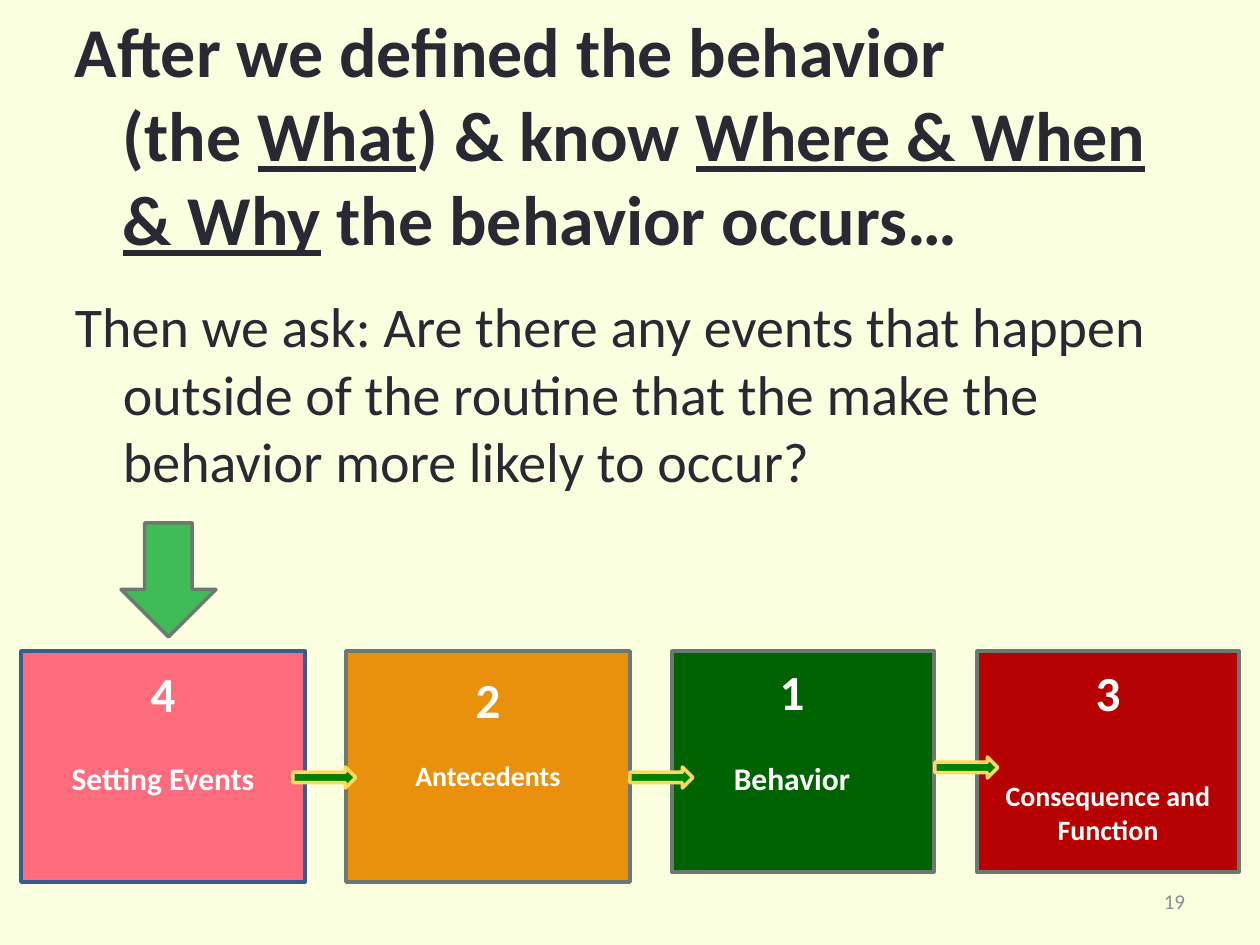
from dataclasses import dataclass

from pptx import Presentation
from pptx.dml.color import RGBColor
from pptx.enum.shapes import MSO_SHAPE
from pptx.enum.text import MSO_ANCHOR, PP_ALIGN
from pptx.util import Pt

RECT, RIGHT, DOWN = MSO_SHAPE.RECTANGLE, MSO_SHAPE.RIGHT_ARROW, MSO_SHAPE.DOWN_ARROW
CENTER, ALIGN_RIGHT = PP_ALIGN.CENTER, PP_ALIGN.RIGHT
TOP, MIDDLE = MSO_ANCHOR.TOP, MSO_ANCHOR.MIDDLE
FONT = "Calibri"
COLORS = {
    "background": "FAFFE0", "text": "292934", "white": "FFFFFF", "page": "8D8D8F",
    "orange": "E9910C", "dark_green": "006301", "red": "B60202", "pink": "FC6C7D",
    "gray": "6D7871", "blue": "385D8A", "green": "008000", "yellow": "FFD95E",
    "light_green": "40BC56",
}


@dataclass
class Step:
    number: str
    label: str
    left: int
    width: int
    height: int
    fill: str
    label_size: int
    top_inset: int
    label_gap: int
    right_inset: int = 12
    line: str = "gray"


@dataclass
class Arrow:
    kind: MSO_SHAPE
    left: int
    top: int
    width: int
    height: int
    fill: str
    line: str


STEPS = [
    Step("2", "Antecedents", 346, 284, 231, "orange", 16, 18, 31),
    Step("1", "Behavior", 672, 262, 221, "dark_green", 18, 10, 39, 34),
    Step("3", "Consequence and Function", 977, 262, 221, "red", 16, 12, 57),
    Step("4", "Setting Events", 21, 284, 231, "pink", 18, 13, 36, line="blue"),
]
ARROWS = [
    Arrow(RIGHT, left, top, 63, 21, "green", "yellow")
    for left, top in ((630, 767), (935, 757), (293, 767))
] + [Arrow(DOWN, 121, 523, 95, 114, "light_green", "gray")]


def px(n: int) -> int:
    return round(n * 914400 / 126)


def rgb(name: str) -> RGBColor:
    return RGBColor.from_string(COLORS[name])


def style_run(r, size: int, color: str, bold: bool = False) -> None:
    r.font.name = FONT
    r.font.size = Pt(size)
    r.font.bold = bold
    r.font.color.rgb = rgb(color)


def set_frame(tf, insets: tuple[int, int, int, int], anchor: MSO_ANCHOR) -> None:
    tf.word_wrap = True
    tf.vertical_anchor = anchor
    left, top, right, bottom = (px(n) for n in insets)
    tf.margin_left, tf.margin_top = left, top
    tf.margin_right, tf.margin_bottom = right, bottom


def add_filled(s, kind: MSO_SHAPE, box: tuple[int, int, int, int], fill: str, line: str):
    sp = s.shapes.add_shape(kind, *(px(n) for n in box))
    sp.shadow.inherit = False
    sp.fill.solid()
    sp.fill.fore_color.rgb = rgb(fill)
    sp.line.color.rgb = rgb(line)
    sp.line.width = Pt(2)
    return sp


def add_step(s, step: Step) -> None:
    sp = add_filled(s, RECT, (step.left, 651, step.width, step.height), step.fill, step.line)
    tf = sp.text_frame
    set_frame(tf, (12, step.top_inset, step.right_inset, 6), TOP)
    tf.text = f"{step.number}\n{step.label}"
    for p, size in zip(tf.paragraphs, (28, step.label_size)):
        p.alignment = CENTER
        style_run(p.runs[0], size, "white", True)
    tf.paragraphs[1].space_before = px(step.label_gap)


def add_arrow(s, arrow: Arrow) -> None:
    box = (arrow.left, arrow.top, arrow.width, arrow.height)
    add_filled(s, arrow.kind, box, arrow.fill, arrow.line)


def add_question(s) -> None:
    tf = s.shapes.add_textbox(px(63), 0, px(1134), px(878)).text_frame
    set_frame(tf, (12, 8, 12, 6), TOP)
    tf.text = "After we defined the behavior\v(the "
    heading = tf.paragraphs[0]
    for text, underline in (
        ("What", True),
        (") & know ", False),
        ("Where & When & Why", True),
        (" the behavior occurs…", False),
    ):
        r = heading.add_run()
        r.text = text
        r.font.underline = underline
    question = tf.add_paragraph()
    question.text = (
        "Then we ask: Are there any events that happen outside of the routine "
        "that the make the behavior more likely to occur?"
    )
    question.space_before = px(32)
    for p, size, bold in ((heading, 40, True), (question, 32, False)):
        pPr = p._p.get_or_add_pPr()
        pPr.set("marL", str(px(48)))
        pPr.set("indent", str(px(-48)))
        for r in p.runs:
            style_run(r, size, "text", bold)


def add_page_number(s) -> None:
    tf = s.shapes.add_textbox(px(903), px(876), px(294), px(50)).text_frame
    set_frame(tf, (12, 6, 12, 6), MIDDLE)
    tf.text = "19"
    p = tf.paragraphs[0]
    p.alignment = ALIGN_RIGHT
    style_run(p.runs[0], 12, "page")


def main() -> None:
    prs = Presentation()
    prs.slide_width, prs.slide_height = px(1260), px(945)
    s = prs.slides.add_slide(prs.slide_layouts[6])
    s.background.fill.solid()
    s.background.fill.fore_color.rgb = rgb("background")
    add_question(s)
    for step in STEPS:
        add_step(s, step)
    for arrow in ARROWS:
        add_arrow(s, arrow)
    add_page_number(s)
    prs.save("out.pptx")


if __name__ == "__main__":
    main()
